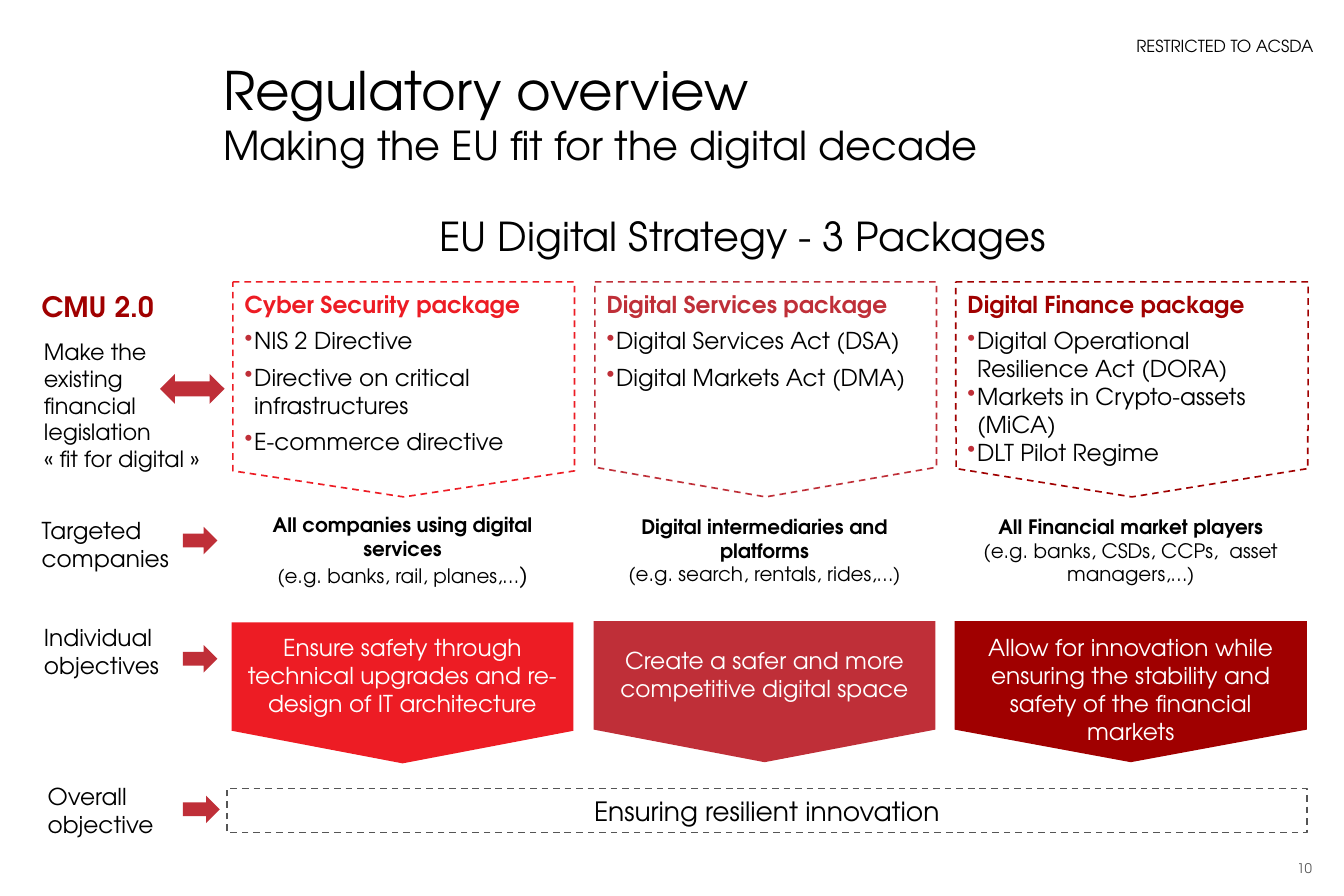
"""Build the regulatory overview slide on the three EU digital packages."""
from dataclasses import dataclass
from typing import Optional

import pptx
import pptx.dml.color
import pptx.enum.dml
import pptx.enum.shapes
import pptx.enum.text
import pptx.oxml
import pptx.oxml.ns
import pptx.util

Inches = pptx.util.Inches
Align = pptx.enum.text.PP_ALIGN
Anchor = pptx.enum.text.MSO_ANCHOR
Preset = pptx.enum.shapes.MSO_SHAPE
Box = tuple[float, float, float, float]


@dataclass(frozen=True)
class Theme:
    """Hold the font, colours and type sizes."""
    font: str = "TeX Gyre Adventor"
    black: str = "000000"
    white: str = "FFFFFF"
    grey: str = "555555"
    bright: str = "ED1C24"
    rose: str = "BF2F38"
    dark: str = "A00000"
    title: float = 32
    subtitle: float = 24
    strategy: float = 16
    programme: float = 16.9
    body: float = 14
    aim: float = 13.5
    audience: float = 12
    marking: float = 10
    page: float = 8


THEME = Theme()


@dataclass(frozen=True)
class Run:
    """Describe a stretch of text in one style."""
    text: str
    size: float = THEME.body
    color: str = THEME.black
    bold: bool = False


@dataclass(frozen=True)
class Para:
    """Describe a paragraph."""
    runs: tuple[Run, ...]
    align: Align = Align.LEFT
    after: float = 0
    bullet: bool = False
    spacing: float = 1


@dataclass(frozen=True)
class Block:
    """Describe a text box, or a preset shape when one is named."""
    box: Box
    paras: tuple[Para, ...] = ()
    anchor: Anchor = Anchor.TOP
    insets: Box = (0.1, 0.05, 0.1, 0.05)
    wrap: bool = True
    preset: Optional[Preset] = None
    adjust: tuple[float, ...] = ()
    fill: Optional[str] = None
    line: Optional[str] = None


@dataclass(frozen=True)
class Package:
    """Describe one package column from its acts down to its objective."""
    left: float
    width: float
    color: str
    name: str
    acts: tuple[tuple[Run, ...], ...]
    act_gap: float
    acts_adjust: tuple[float, ...]
    audience: str
    examples: tuple[Run, ...]
    objective: str
    objective_top: float = 5.2
    objective_anchor: Anchor = Anchor.MIDDLE
    objective_inset: float = 0.07


def rgb(color: str) -> pptx.dml.color.RGBColor:
    """Return the colour for a hex string."""
    return pptx.dml.color.RGBColor.from_string(color)


def fill_paragraph(paragraph, para: Para) -> None:
    """Write a paragraph run by run."""
    if para.bullet:
        properties = paragraph._p.get_or_add_pPr()
        properties.set("marL", str(Inches(0.08)))
        properties.set("indent", str(-Inches(0.08)))
        space = pptx.oxml.ns.nsdecls("a")
        for xml in (f'<a:buClr {space}><a:srgbClr val="{THEME.rose}"/></a:buClr>',
                    f'<a:buChar {space} char="•"/>'):
            properties.append(pptx.oxml.parse_xml(xml))
    paragraph.alignment = para.align
    paragraph.space_after = pptx.util.Pt(para.after)
    paragraph.line_spacing = para.spacing
    for part in para.runs:
        for number, words in enumerate(part.text.split("\n")):
            if number:
                paragraph.add_line_break()
            run = paragraph.add_run()
            run.text = words
            run.font.name = THEME.font
            run.font.size = pptx.util.Pt(part.size)
            run.font.bold = part.bold
            run.font.color.rgb = rgb(part.color)


def draw(slide, block: Block) -> None:
    """Draw a block with its outline, fill and text."""
    place = [Inches(length) for length in block.box]
    if block.preset is None:
        shape = slide.shapes.add_textbox(*place)
    else:
        shape = slide.shapes.add_shape(block.preset, *place)
        shape.shadow.inherit = False
        for number, value in enumerate(block.adjust):
            shape.adjustments[number] = value
        if block.fill:
            shape.fill.solid()
            shape.fill.fore_color.rgb = rgb(block.fill)
        else:
            shape.fill.background()
        if block.line:
            shape.line.color.rgb = rgb(block.line)
            shape.line.width = pptx.util.Pt(1)
            shape.line.dash_style = pptx.enum.dml.MSO_LINE.DASH
        else:
            shape.line.fill.background()
    frame = shape.text_frame
    frame.word_wrap = block.wrap
    frame.vertical_anchor = block.anchor
    (frame.margin_left, frame.margin_top,
     frame.margin_right, frame.margin_bottom) = map(Inches, block.insets)
    for number, para in enumerate(block.paras):
        fill_paragraph(frame.add_paragraph() if number else frame.paragraphs[0], para)


def draw_package(slide, package: Package) -> None:
    """Draw a package's acts, audience and objective."""
    left, width = package.left, package.width
    heading = Para((Run(package.name, color=package.color, bold=True),), after=5.1)
    acts = tuple(Para(runs, after=package.act_gap, bullet=True) for runs in package.acts)
    audience = Run(package.audience, THEME.audience, bold=True)
    objective = Run(package.objective, color=THEME.white)
    callout = Preset.DOWN_ARROW_CALLOUT
    draw(slide, Block((left, 2.36, width, 1.8), (heading, *acts), insets=(0.1, 0.07, 0.03, 0.03),
                      preset=callout, adjust=package.acts_adjust, line=package.color))
    draw(slide, Block((left - 0.01, 4.24, width, 0.73),
                      (Para((audience,), Align.CENTER), Para(package.examples, Align.CENTER)),
                      Anchor.MIDDLE))
    draw(slide, Block((left - 0.01, package.objective_top, width, 1.18),
                      (Para((objective,), Align.CENTER),), package.objective_anchor,
                      (0.03, package.objective_inset, 0.03, 0), preset=callout,
                      adjust=(3.4, 1.7, 0.231, 0.687), fill=package.color))


PACKAGES = (
    Package(1.95, 2.86, THEME.bright, "Cyber Security package",
            ((Run("NIS 2 Directive"),), (Run("Directive on critical infrastructures"),),
             (Run("E-commerce directive"),)), 5.1, (2.469, 1.235, 0.121, 0.687),
            "All companies using digital services",
            (Run("(e.g. banks, rail, planes,…", THEME.audience), Run(")")),
            "Ensure safety through technical upgrades and re-design of IT architecture", 5.21),
    Package(4.98, 2.86, THEME.rose, "Digital Services package",
            ((Run("Digital Services Act (DSA)"),),
             (Run("Digital Markets Act (DMA"), Run(")", THEME.aim))),
            5.1, (2.469, 1.235, 0.138, 0.687), "Digital intermediaries and platforms",
            (Run("(e.g. search, rentals, rides,…)", THEME.audience),),
            "Create a safer and more competitive digital space"),
    Package(8, 2.95, THEME.dark, "Digital Finance package",
            ((Run("Digital Operational Resilience Act (DORA)"),),
             (Run("Markets in Crypto-assets (MiCA)"),), (Run("DLT Pilot Regime"),)),
            0, (1.635, 1.235, 0.132, 0.687), "All Financial market players",
            (Run("(e.g. banks, CSDs, CCPs,  asset managers,…)", THEME.audience),),
            "Allow for innovation while ensuring the stability and safety of the financial\nmarkets",
            objective_anchor=Anchor.TOP, objective_inset=0.1),
)
BLOCKS = (
    Block((3.46, 0.13, 7.63, 0.39),
          (Para((Run("RESTRICTED TO ACSDA", THEME.marking),), Align.RIGHT, spacing=1.1),),
          Anchor.BOTTOM),
    Block((10.66, 7.14, 0.42, 0.24),
          (Para((Run("10", THEME.page, THEME.grey),), Align.RIGHT),), Anchor.BOTTOM),
    Block((1.77, 0.43, 8.5, 0.79),
          (Para((Run("Regulatory overview", THEME.title),)),
           Para((Run("Making the EU fit for the digital decade", THEME.subtitle),)))),
    Block((3.58, 1.72, 5.36, 0.5),
          (Para((Run("EU Digital Strategy - 3 Packages", THEME.subtitle),)),), wrap=False),
    Block((0.25, 2.37, 1.39, 0.39),
          (Para((Run("CMU 2.0", THEME.programme, THEME.dark, True),)),)),
    Block((0.27, 2.78, 1.54, 1.24),
          (Para((Run("Make the existing financial legislation\n« fit for digital »", THEME.aim),)),)),
    Block((0.25, 4.27, 1.89, 0.57), (Para((Run("Targeted"),)), Para((Run("companies"),)))),
    Block((0.27, 5.17, 1.6, 0.57), (Para((Run("Individual objectives"),)),)),
    Block((0.3, 6.5, 1.6, 0.57), (Para((Run("Overall objective"),)),)),
    Block((1.9, 6.6, 9.04, 0.37),
          (Para((Run("Ensuring resilient innovation", THEME.strategy),), Align.CENTER),),
          Anchor.MIDDLE, preset=Preset.RECTANGLE, line=THEME.grey),
    Block((1.34, 3.13, 0.54, 0.25), preset=Preset.LEFT_RIGHT_ARROW, fill=THEME.rose),
    *(Block((1.53, top, width, 0.23), preset=Preset.RIGHT_ARROW, fill=THEME.rose)
      for top, width in ((4.41, 0.29), (5.4, 0.29), (6.66, 0.31))),
)


def main() -> None:
    """Build and save the slide."""
    deck = pptx.Presentation()
    deck.slide_width, deck.slide_height = Inches(11.25), Inches(7.5)
    slide = deck.slides.add_slide(deck.slide_layouts[6])
    for package in PACKAGES:
        draw_package(slide, package)
    for block in BLOCKS:
        draw(slide, block)
    deck.save("out.pptx")


if __name__ == "__main__":
    main()
